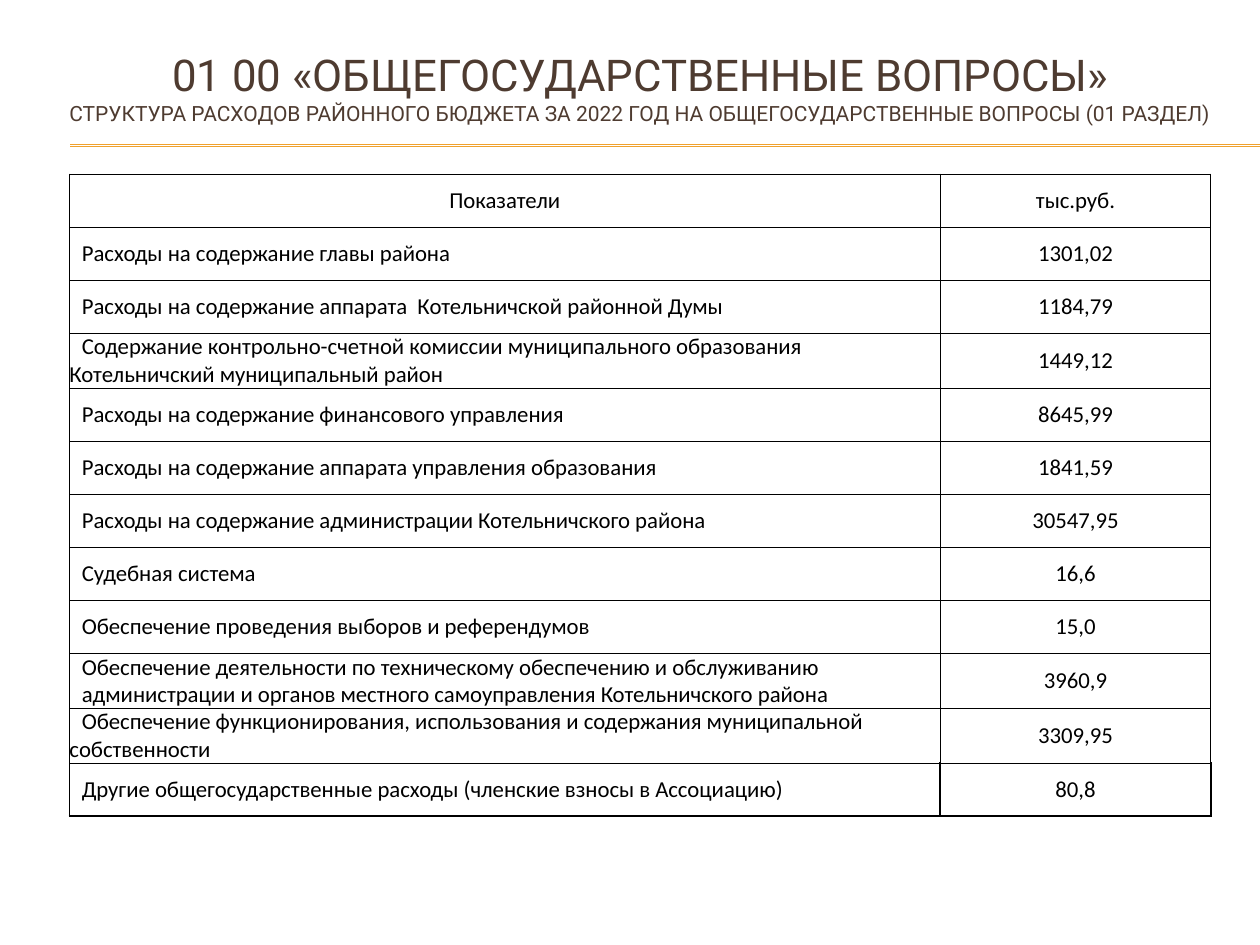
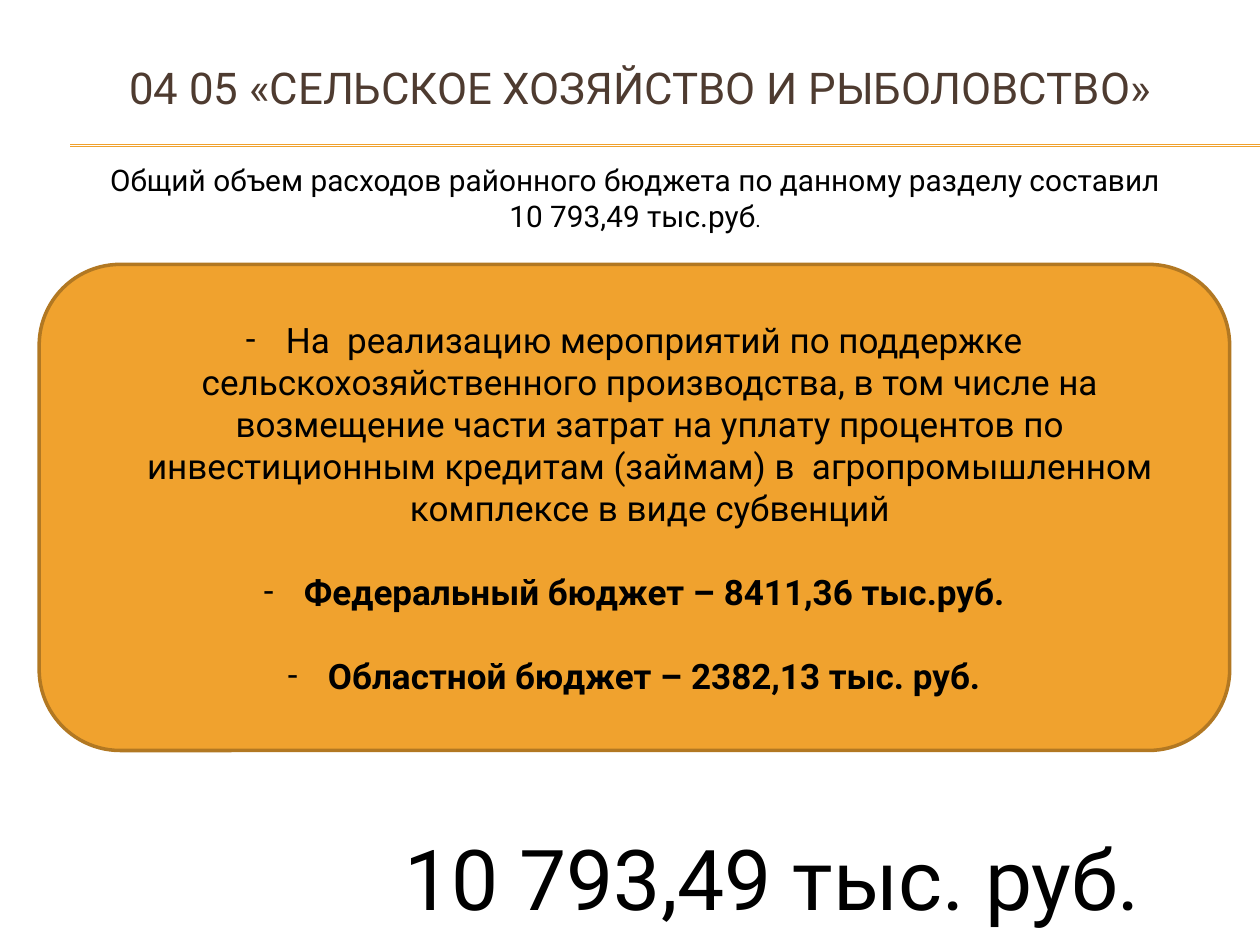
"""Build two slides on district budget spending for 2022."""
from lxml import etree
from pptx import Presentation
from pptx.dml.color import RGBColor
from pptx.enum.shapes import MSO_CONNECTOR, MSO_SHAPE
from pptx.enum.text import MSO_ANCHOR, PP_ALIGN
from pptx.oxml.ns import qn
from pptx.util import Cm, Pt

LINE = MSO_CONNECTOR.STRAIGHT
ROUND = MSO_SHAPE.ROUNDED_RECTANGLE
MIDDLE = MSO_ANCHOR.MIDDLE
LEFT, CENTER = PP_ALIGN.LEFT, PP_ALIGN.CENTER
HEX = {"title": "4E3B30", "gold": "F0A22E", "edge": "B27822", "text": "000000"}
RGB = {name: RGBColor.from_string(code) for name, code in HEX.items()}


def style(par, size, font="Roboto", color="text", align=CENTER):
    par.alignment = align
    for run in par.runs:
        run.font.size = Pt(size)
        run.font.name = font
        run.font.color.rgb = RGB[color]


def indent(par, margin, first):
    props = par._p.get_or_add_pPr()
    props.set("marL", str(Cm(margin)))
    props.set("indent", str(Cm(first)))
    return props


deck = Presentation()
deck.slide_width, deck.slide_height = Cm(25.4), Cm(19.05)
blank = deck.slide_layouts[6]

titles = [
    "01 00 «ОБЩЕГОСУДАРСТВЕННЫЕ ВОПРОСЫ»\v"
    "СТРУКТУРА РАСХОДОВ РАЙОННОГО БЮДЖЕТА ЗА 2022 ГОД "
    "НА ОБЩЕГОСУДАРСТВЕННЫЕ ВОПРОСЫ (01 РАЗДЕЛ)",
    "04 05 «СЕЛЬСКОЕ ХОЗЯЙСТВО И РЫБОЛОВСТВО»",
]
for title in titles:
    slide = deck.slides.add_slide(blank)
    for y in (2.92, 2.95):
        rule = slide.shapes.add_connector(LINE, Cm(1.42), Cm(y), Cm(25.4), Cm(y))
        rule.line.color.rgb = RGB["gold"]
        rule.line.width = Pt(0.75)
        etree.SubElement(rule._element.spPr, qn("a:effectLst"))
    frame = slide.shapes.add_textbox(Cm(0.84), Cm(0.58), Cm(24.13), Cm(2.34)).text_frame
    frame.word_wrap = True
    frame.vertical_anchor = MIDDLE
    frame.text = title
    style(frame.paragraphs[0], 25, color="title")
    for run in frame.paragraphs[0].runs[1:]:
        run.font.size = Pt(12)
budget, farming = deck.slides

rows = [
    ("Показатели", "тыс.руб."),
    ("Расходы на содержание главы района", "1301,02"),
    ("Расходы на содержание аппарата  Котельничской районной Думы", "1184,79"),
    ("Содержание контрольно-счетной комиссии муниципального образования "
     "Котельничский муниципальный район", "1449,12"),
    ("Расходы на содержание финансового управления", "8645,99"),
    ("Расходы на содержание аппарата управления образования", "1841,59"),
    ("Расходы на содержание администрации Котельничского района", "30547,95"),
    ("Судебная система", "16,6"),
    ("Обеспечение проведения выборов и референдумов", "15,0"),
    ("Обеспечение деятельности по техническому обеспечению и обслуживанию "
     "администрации и органов местного самоуправления Котельничского района", "3960,9"),
    ("Обеспечение функционирования, использования и содержания муниципальной "
     "собственности", "3309,95"),
    ("Другие общегосударственные расходы (членские взносы в Ассоциацию)", "80,8"),
]
last = len(rows) - 1
block = 9
table = budget.shapes.add_table(
    len(rows), 2, Cm(1.4), Cm(3.51), Cm(23.01), Cm(1.07 * len(rows))).table
table.first_row = table.horz_banding = False
table.columns[0].width, table.columns[1].width = Cm(17.55), Cm(5.46)
for r, row in enumerate(rows):
    table.rows[r].height = Cm(1.07)
    for c, value in enumerate(row):
        cell = table.cell(r, c)
        cell.text = value
        cell.vertical_anchor = MIDDLE
        cell.margin_left = cell.margin_right = cell.margin_top = cell.margin_bottom = 0
        par = cell.text_frame.paragraphs[0]
        label = r > 0 and c == 0
        style(par, 13, "Calibri", align=LEFT if label else CENTER)
        if label:
            indent(par, *((0.25, 0) if r == block else (0, 0.25)))
        props = cell._tc.get_or_add_tcPr()
        for side in "LRTB":
            width = Pt(1) if r == last and side != "T" else Pt(0.5)
            edge = etree.SubElement(props, qn(f"a:ln{side}"), w=str(width))
            fill = etree.SubElement(edge, qn("a:solidFill"))
            etree.SubElement(fill, qn("a:srgbClr"), val=HEX["text"])
        cell.fill.background()

frame = farming.shapes.add_textbox(Cm(0.25), Cm(3.33), Cm(24.61), Cm(1.75)).text_frame
frame.word_wrap = True
frame.vertical_anchor = MIDDLE
frame.margin_top, frame.margin_bottom = 0, Cm(0.43)
frame.text = ("Общий объем расходов районного бюджета по данному разделу составил\n"
              "10 793,49 тыс.руб")
dot = frame.paragraphs[1].add_run()
dot.text = "."
for par in frame.paragraphs:
    style(par, 17)
    indent(par, 0, 0.5)
dot.font.size = Pt(12)

panel = farming.shapes.add_shape(ROUND, Cm(0.79), Cm(5.33), Cm(24), Cm(9.8))
panel.shadow.inherit = False
panel.fill.solid()
panel.fill.fore_color.rgb = RGB["gold"]
panel.line.color.rgb = RGB["edge"]
panel.line.width = Pt(2)
frame = panel.text_frame
frame.word_wrap = True
frame.vertical_anchor = MIDDLE
frame.text = "\n".join([
    " На  реализацию мероприятий по поддержке сельскохозяйственного производства, "
    "в том числе на возмещение части затрат на уплату процентов по инвестиционным "
    "кредитам (займам) в  агропромышленном комплексе в виде субвенций",
    " Федеральный бюджет – 8411,36 тыс.руб.",
    " Областной бюджет – 2382,13 тыс. руб.",
])
for i, par in enumerate(frame.paragraphs):
    style(par, 20)
    par.space_before = Pt(24 if i else 0)
    par.runs[0].font.bold = i > 0
    props = indent(par, 0.63, -0.63)
    etree.SubElement(props, qn("a:buFont"), typeface="Roboto")
    etree.SubElement(props, qn("a:buChar"), char="-")

frame = farming.shapes.add_textbox(Cm(7.9), Cm(16.54), Cm(15.67), Cm(1.85)).text_frame
frame.word_wrap = True
frame.text = "10 793,49 тыс. руб."
style(frame.paragraphs[0], 48, align=LEFT)

deck.save("out.pptx")
